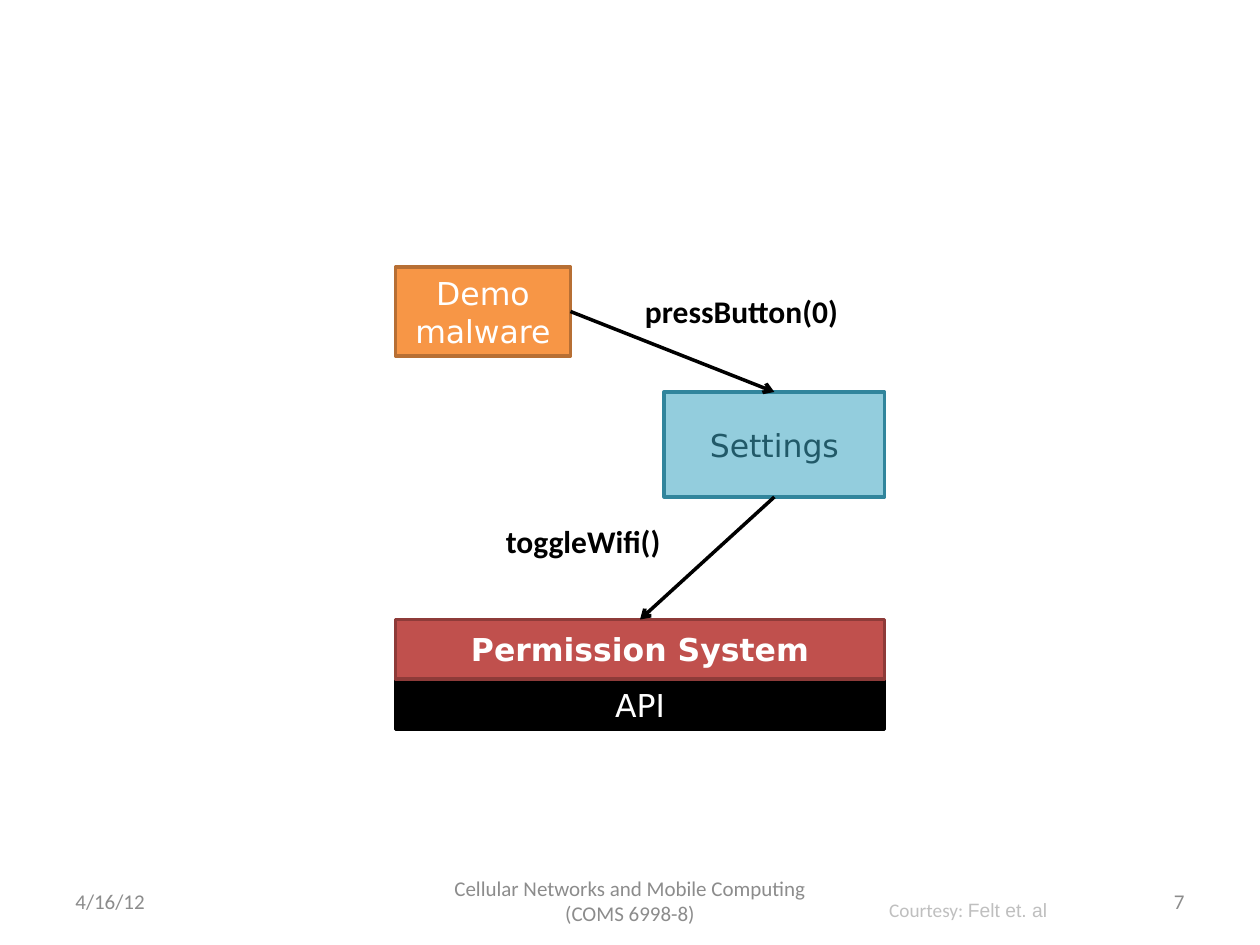
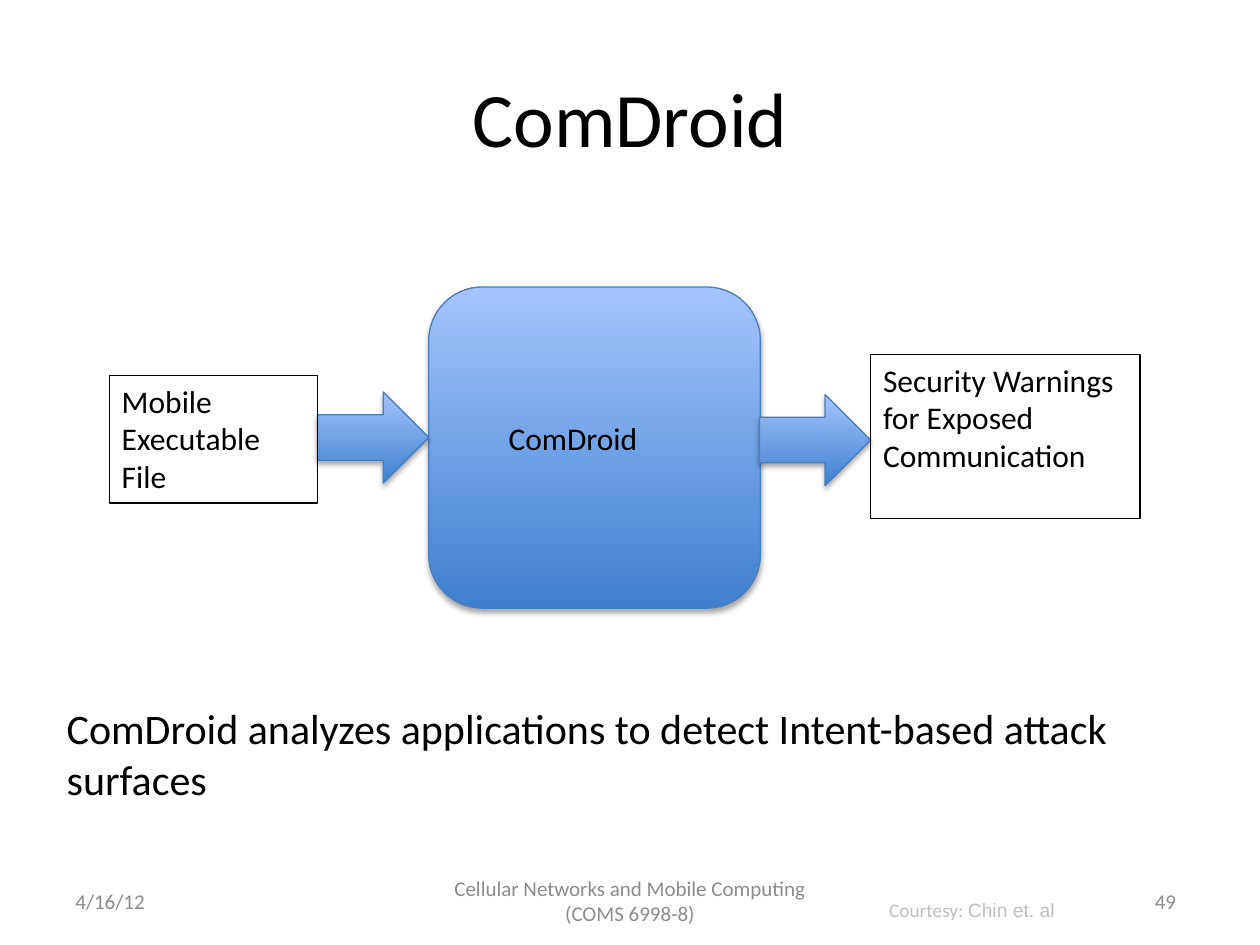
from lxml import etree
from pptx import Presentation
from pptx import util as u
from pptx.dml import color
from pptx.enum import shapes, text
from pptx.oxml import ns

BODY, DIAGRAM, SOURCE = "Calibri", "DejaVu Sans", "Arial"
BLACK, WHITE, FOOTER_GREY, COURTESY_GREY = "000000", "FFFFFF", "8C8C8C", "BFBFBF"
LEFT, CENTER, RIGHT = text.PP_ALIGN.LEFT, text.PP_ALIGN.CENTER, text.PP_ALIGN.RIGHT
TOP, MIDDLE = text.MSO_ANCHOR.TOP, text.MSO_ANCHOR.MIDDLE
KIND = shapes.MSO_SHAPE
FOOTER_TOP, FOOTER_HEIGHT = 500.5, 28.75

rgb = color.RGBColor.from_string


def add_text(page, place, spans, size=18, ink=BLACK, bold=False, align=LEFT,
             anchor=TOP, wrap=True, fill=None, edge=None, edge_width=0.75):
    """Add (wording, font) spans in a text box, or in a rectangle if edge is set."""
    place = [u.Pt(length) for length in place]
    if edge:
        box = page.shapes.add_shape(KIND.RECTANGLE, *place)
        box.shadow.inherit = False
        box.line.color.rgb = rgb(edge)
        box.line.width = u.Pt(edge_width)
        if fill:
            box.fill.solid()
            box.fill.fore_color.rgb = rgb(fill)
        else:
            box.fill.background()
    else:
        box = page.shapes.add_textbox(*place)
    frame = box.text_frame
    frame.word_wrap = wrap
    frame.vertical_anchor = anchor
    para = frame.paragraphs[0]
    para.alignment = align
    for wording, font in spans:
        span = para.add_run()
        span.text = wording
        span.font.name = font
        span.font.size = u.Pt(size)
        span.font.bold = bold
        span.font.color.rgb = rgb(ink)
    return box


deck = Presentation()
deck.slide_width, deck.slide_height = u.Pt(720), u.Pt(540)
blank = deck.slide_layouts[6]
attack_page = deck.slides.add_slide(blank)
tool_page = deck.slides.add_slide(blank)

# Footers: date, course, page number and courtesy line
for page, number, number_left, number_width, number_align, authors, courtesy_width in (
    (attack_page, "7", 516, 168, RIGHT, "Felt et. al", 106),
    (tool_page, "49", 552, 228, CENTER, "Chin et. al", 110),
):
    for wording, left, width, align in (
        ("4/16/12", 36, 168, LEFT),
        ("Cellular Networks and Mobile Computing (COMS 6998-8)", 246, 228, CENTER),
        (number, number_left, number_width, number_align),
    ):
        add_text(page, (left, FOOTER_TOP, width, FOOTER_HEIGHT), [(wording, BODY)],
                 size=12, ink=FOOTER_GREY, align=align, anchor=MIDDLE)
    add_text(page, (501, 510, courtesy_width, 21),
             [("Courtesy: ", BODY), (authors, SOURCE)],
             size=11, ink=COURTESY_GREY, wrap=False)

# Slide 1: malware reaches the API through the settings application
parts = {}
for wording, place, fill, edge, ink, bold in (
    ("API", (226, 388, 279.5, 29), BLACK, BLACK, WHITE, False),
    ("Settings", (379.5, 224, 126, 60), "93CDDD", "31859C", "215968", False),
    ("Demo malware", (226, 152.5, 100, 51), "F79646", "B76F34", WHITE, False),
    ("Permission System", (226, 354, 279.5, 34), "C0504D", "8E3B39", WHITE, True),
):
    parts[wording] = add_text(attack_page, place, [(wording, DIAGRAM)], ink=ink,
                              bold=bold, align=CENTER, anchor=MIDDLE,
                              fill=fill, edge=edge, edge_width=2)

TOP_SITE, BOTTOM_SITE, RIGHT_SITE = 0, 2, 3
for caller, caller_site, callee in (
    ("Demo malware", RIGHT_SITE, "Settings"),
    ("Settings", BOTTOM_SITE, "Permission System"),
):
    call = attack_page.shapes.add_connector(shapes.MSO_CONNECTOR.STRAIGHT, 0, 0, 0, 0)
    call.begin_connect(parts[caller], caller_site)
    call.end_connect(parts[callee], TOP_SITE)
    call.line.color.rgb = rgb(BLACK)
    call.line.width = u.Pt(2)
    etree.SubElement(call.line._get_or_add_ln(), ns.qn("a:tailEnd"), type="arrow")
    etree.SubElement(call._element.spPr, ns.qn("a:effectLst"))

for wording, place in (
    ("toggleWifi()", (282, 295, 114.5, 29)),
    ("pressButton(0)", (361.5, 163.5, 144, 29)),
):
    add_text(attack_page, place, [(wording, BODY)], bold=True, wrap=False)

# Slide 2: the tool between its input and its output
add_text(tool_page, (36, 21.6, 648, 90), [("ComDroid", BODY)],
         size=44, align=CENTER, anchor=MIDDLE)

for kind, place in (
    (KIND.ROUNDED_RECTANGLE, (245, 164, 189.5, 183.5)),
    (KIND.RIGHT_ARROW, (181.5, 224, 63.5, 52)),
    (KIND.RIGHT_ARROW, (434, 225.5, 63.5, 52)),
):
    block = tool_page.shapes.add_shape(kind, *[u.Pt(length) for length in place])
    block.fill.gradient()
    block.fill.gradient_angle = 90
    for stop, shade in zip(block.fill.gradient_stops, ("3F80CE", "A4C4FF")):
        stop.color.rgb = rgb(shade)
    block.line.color.rgb = rgb("4B7EBC")
    block.line.width = u.Pt(0.75)
    block.shadow.inherit = False
    effects = block._element.spPr.find(ns.qn("a:effectLst"))
    shadow = etree.SubElement(effects, ns.qn("a:outerShdw"), blurRad=str(u.Pt(3.1)),
                              dist=str(u.Pt(1.8)), dir="5400000", rotWithShape="0")
    shadow_color = etree.SubElement(shadow, ns.qn("a:srgbClr"), val=BLACK)
    etree.SubElement(shadow_color, ns.qn("a:alpha"), val="35000")

for wording, place, size, edge in (
    ("ComDroid", (283.5, 236, 214, 29), 18, None),
    ("Mobile Executable File", (62.5, 214.5, 119, 73), 18, BLACK),
    ("Security Warnings for Exposed Communication", (497.5, 202.5, 154, 94), 18, BLACK),
    ("ComDroid analyzes applications to detect Intent-based attack surfaces",
     (31, 398, 620.5, 65.5), 24, None),
):
    add_text(tool_page, place, [(wording, BODY)], size=size, edge=edge)

deck.save("out.pptx")
